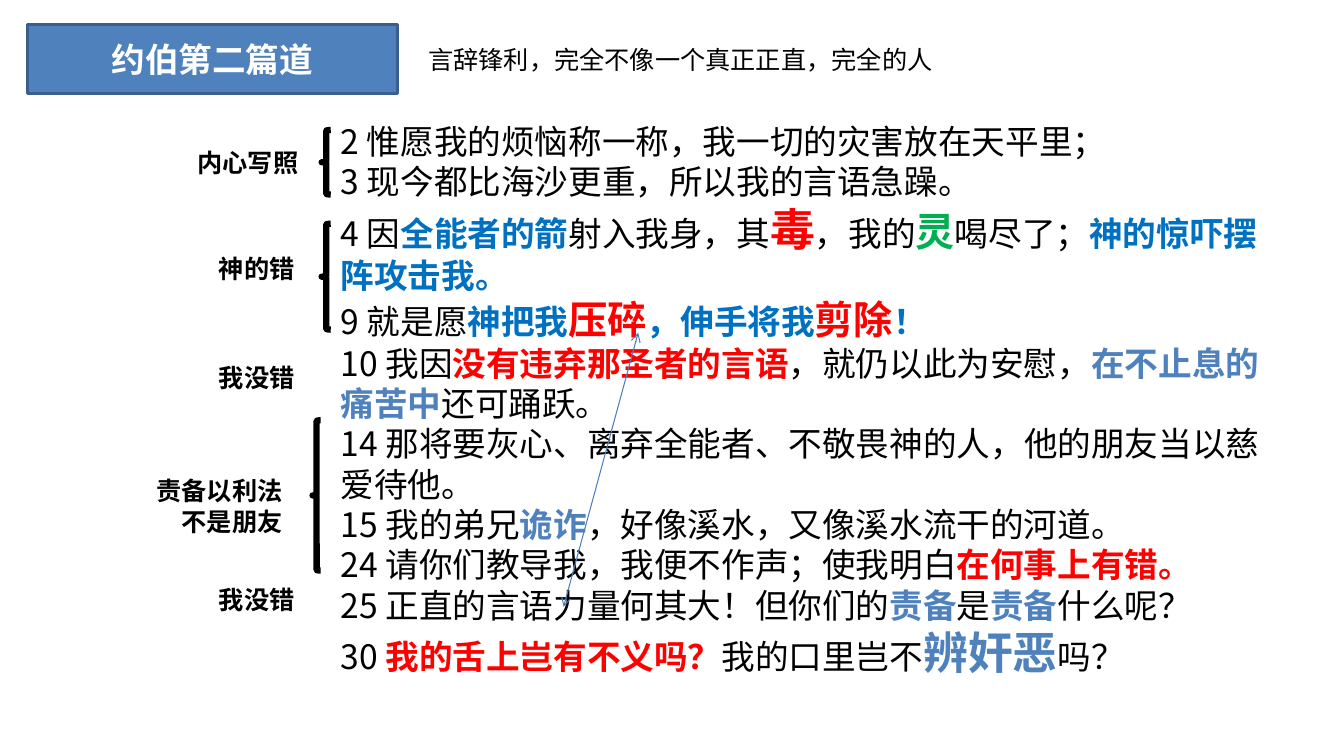
from lxml.etree import SubElement
from pptx import Presentation
from pptx.dml.color import RGBColor
from pptx.enum.lang import MSO_LANGUAGE_ID
from pptx.enum.shapes import MSO_CONNECTOR, MSO_SHAPE
from pptx.enum.text import MSO_ANCHOR, MSO_AUTO_SIZE, PP_ALIGN
from pptx.oxml.ns import qn
from pptx.util import Inches, Pt

FONT = "Noto Sans CJK SC"
STYLES = {
    "plain": (24, "000000", False),
    "god": (24, "0070C0", True),
    "claim": (24, "FF0000", True),
    "blow": (28, "FF0000", True),
    "poison": (32, "FF0000", True),
    "spirit": (28, "00B050", True),
    "rebuke": (24, "4F81BD", True),
    "discern": (32, "4F81BD", True),
    "label": (18, "000000", True),
    "remark": (18, "000000", False),
    "title": (24, "FFFFFF", True),
}
VERSES = [
    [("2 惟愿我的烦恼称一称，我一切的灾害放在天平里；", "plain")],
    [("3 现今都比海沙更重，所以我的言语急躁。", "plain")],
    [("4 因", "plain"), ("全能者的箭", "god"), ("射入我身，其", "plain"),
     ("毒", "poison"), ("，我的", "plain"), ("灵", "spirit"),
     ("喝尽了；", "plain"), ("神的惊吓摆阵攻击我。", "god")],
    [("9 就是愿", "plain"), ("神把我", "god"), ("压碎", "blow"),
     ("，伸手将我", "god"), ("剪除", "blow"), ("！", "god")],
    [("10 我因", "plain"), ("没有违弃那圣者的言语", "claim"),
     ("，就仍以此为安慰，", "plain"), ("在不止息的痛苦中", "rebuke"),
     ("还可踊跃。", "plain")],
    [("14 那将要灰心、离弃全能者、不敬畏神的人，他的朋友当以慈爱待他。", "plain")],
    [("15 我的弟兄", "plain"), ("诡诈", "rebuke"),
     ("，好像溪水，又像溪水流干的河道。", "plain")],
    [("24 请你们教导我，我便不作声；使我明白", "plain"), ("在何事上有错。", "claim")],
    [("25 正直的言语力量何其大！但你们的", "plain"), ("责备", "rebuke"),
     ("是", "plain"), ("责备", "rebuke"), ("什么呢？", "plain")],
    [("30 ", "plain"), ("我的舌上岂有不义吗？", "claim"), ("我的口里岂不", "plain"),
     ("辨奸恶", "discern"), ("吗？", "plain")],
]
LABELS = [
    ("内心写照", (1.86, 1.41, 1.67, 0.4), PP_ALIGN.LEFT),
    ("神的错", (1.73, 2.46, 1.29, 0.4), PP_ALIGN.RIGHT),
    ("我没错", (1.73, 3.55, 1.29, 0.4), PP_ALIGN.RIGHT),
    ("责备以利法不是朋友", (1.33, 4.67, 1.57, 0.71), PP_ALIGN.RIGHT),
    ("我没错", (1.73, 5.75, 1.29, 0.4), PP_ALIGN.RIGHT),
]
BRACES = [(3.19, 1.29, 0.09, 0.64), (3.19, 2.22, 0.09, 1.05), (3.1, 4.17, 0.08, 1.49)]


def color(value):
    """Return the colour for a hex string."""
    return RGBColor.from_string(value)


def inches(box):
    """Return the numbers of a box as lengths."""
    return [Inches(number) for number in box]


def format_run(run, style):
    """Apply a named text style to a run."""
    size, text_color, bold = STYLES[style]
    run.font.size = Pt(size)
    run.font.bold = bold
    run.font.color.rgb = color(text_color)
    run.font.name = FONT
    run.font.language_id = MSO_LANGUAGE_ID.SIMPLIFIED_CHINESE
    latin = run.font._element.find(qn("a:latin"))
    east_asian = SubElement(run.font._element, qn("a:ea"), typeface=FONT)
    latin.addnext(east_asian)


def add_text(slide, box, paragraphs, alignment=PP_ALIGN.LEFT):
    """Add a wrapping text box with paragraphs of styled runs."""
    text_frame = slide.shapes.add_textbox(*inches(box)).text_frame
    text_frame.word_wrap = True
    text_frame.auto_size = MSO_AUTO_SIZE.SHAPE_TO_FIT_TEXT
    for index, parts in enumerate(paragraphs):
        paragraph = text_frame.add_paragraph() if index else text_frame.paragraphs[0]
        paragraph.alignment = alignment
        for text, style in parts:
            run = paragraph.add_run()
            run.text = text
            format_run(run, style)


def add_heading(slide, box):
    """Format the title as a rounded banner and add the remark beside it."""
    left, top, width, height = box
    title = slide.shapes.title
    title.left, title.top, title.width, title.height = inches(box)
    geometry = SubElement(title._element.spPr, qn("a:prstGeom"), prst="roundRect")
    SubElement(geometry, qn("a:avLst"))
    title.fill.solid()
    title.fill.fore_color.rgb = color("4F81BD")
    title.line.color.rgb = color("3A5F8C")
    title.line.width = Pt(2)
    text_frame = title.text_frame
    text_frame.text = "约伯第二篇道"
    text_frame.auto_size = MSO_AUTO_SIZE.NONE
    text_frame.vertical_anchor = MSO_ANCHOR.MIDDLE
    text_frame.paragraphs[0].alignment = PP_ALIGN.CENTER
    format_run(text_frame.paragraphs[0].runs[0], "title")
    remark = "言辞锋利，完全不像一个真正正直，完全的人"
    add_text(slide, (left + width + 0.21, top + 0.15, 5.4, 0.4), [[(remark, "remark")]])


def add_brace(slide, box):
    """Add a heavy left brace that fills the box."""
    brace = slide.shapes.add_shape(MSO_SHAPE.LEFT_BRACE, *inches(box))
    brace.shadow.inherit = False
    brace.fill.background()
    brace.line.color.rgb = color("000000")
    brace.line.width = Pt(4.5)


def add_outline(slide):
    """Add the section labels and the braces that group the verses."""
    for text, box, alignment in LABELS:
        add_text(slide, box, [[(text, "label")]], alignment)
    for box in BRACES:
        add_brace(slide, box)


def add_link_arrow(slide, start, end):
    """Add a thin line with open arrowheads at both ends."""
    connector = slide.shapes.add_connector(MSO_CONNECTOR.STRAIGHT, *inches(start + end))
    connector.line.color.rgb = color("4B7EBC")
    connector.line.width = Pt(0.75)
    line = connector.line._get_or_add_ln()
    for tag in ("a:headEnd", "a:tailEnd"):
        SubElement(line, qn(tag), type="arrow")
    SubElement(connector._element.spPr, qn("a:effectLst"))


def main():
    """Build and save the slide."""
    presentation = Presentation()
    presentation.slide_width = Inches(13.33)
    presentation.slide_height = Inches(7.5)
    slide = presentation.slides.add_slide(presentation.slide_layouts[5])
    add_heading(slide, (0.27, 0.24, 3.67, 0.69))
    add_text(slide, (3.28, 1.15, 9.31, 5.69), VERSES)
    add_outline(slide)
    add_link_arrow(slide, (5.59, 6.02), (6.33, 3.3))
    presentation.save("out.pptx")


if __name__ == "__main__":
    main()
